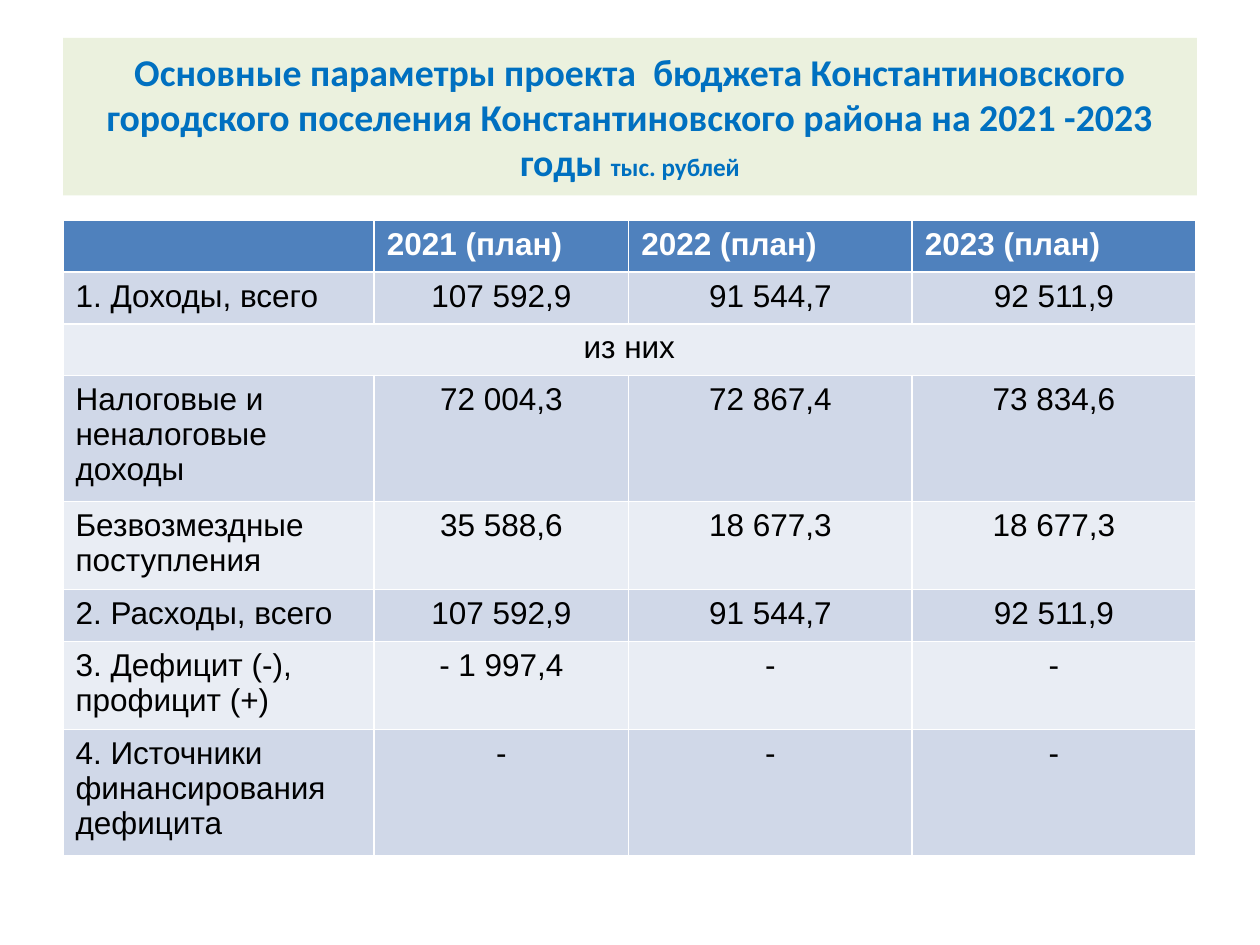
from pptx import Presentation
from pptx.dml.color import RGBColor
from pptx.enum.text import MSO_ANCHOR, MSO_AUTO_SIZE, PP_ALIGN
from pptx.util import Inches, Pt

PALE_GREEN = RGBColor(0xEB, 0xF1, 0xDE)
TITLE_BLUE = RGBColor(0x00, 0x70, 0xC0)
HEADER_BLUE = RGBColor(0x4F, 0x81, 0xBD)
DARK_BAND = RGBColor(0xD0, 0xD8, 0xE8)
LIGHT_BAND = RGBColor(0xE9, 0xED, 0xF4)
WHITE = RGBColor(0xFF, 0xFF, 0xFF)
BLACK = RGBColor(0x00, 0x00, 0x00)

TITLE_RUNS = [
    ("Основные параметры проекта  бюджета Константиновского городского "
     "поселения Константиновского района на 2021 -2023 годы ", 21.6),
    ("тыс. рублей", 14.4),
]
COLUMN_WIDTHS = [2.47, 2.02, 2.25, 2.25]
ROW_HEIGHTS = [0.41, 0.41, 0.41, 1, 0.7, 0.41, 0.7, 1]
SUBHEADING_ROW = 2
BUDGET_ROWS = [
    ["", "2021 (план)", "2022 (план)", "2023 (план)"],
    ["1. Доходы, всего", "107 592,9", "91 544,7", "92 511,9"],
    ["из них"],
    ["Налоговые и неналоговые доходы", "72 004,3", "72 867,4", "73 834,6"],
    ["Безвозмездные поступления", "35 588,6", "18 677,3", "18 677,3"],
    ["2. Расходы, всего", "107 592,9", "91 544,7", "92 511,9"],
    ["3. Дефицит (-), профицит (+)", "- 1 997,4", "-", "-"],
    ["4. Источники финансирования дефицита", "-", "-", "-"],
]


def format_font(font, name, size, color, bold):
    font.name = name
    font.size = Pt(size)
    font.color.rgb = color
    font.bold = bold


def fill_title(title):
    title.left, title.top = Inches(0.5), Inches(0.3)
    title.width, title.height = Inches(9), Inches(1.25)
    title.fill.solid()
    title.fill.fore_color.rgb = PALE_GREEN
    text_frame = title.text_frame
    text_frame.auto_size = MSO_AUTO_SIZE.NONE
    text_frame.word_wrap = True
    text_frame.vertical_anchor = MSO_ANCHOR.MIDDLE
    paragraph = text_frame.paragraphs[0]
    paragraph.alignment = PP_ALIGN.CENTER
    for text, size in TITLE_RUNS:
        run = paragraph.add_run()
        run.text = text
        format_font(run.font, "Calibri", size, TITLE_BLUE, True)


def fill_cell(cell, text, fill_color, font_color, bold, alignment):
    cell.fill.solid()
    cell.fill.fore_color.rgb = fill_color
    paragraph = cell.text_frame.paragraphs[0]
    paragraph.text = text
    paragraph.alignment = alignment
    format_font(paragraph.font, "Arial", 18, font_color, bold)
    for run in paragraph.runs:
        format_font(run.font, "Arial", 18, font_color, bold)


def add_budget_table(slide):
    table = slide.shapes.add_table(
        len(ROW_HEIGHTS), len(COLUMN_WIDTHS), Inches(0.5), Inches(1.75),
        Inches(sum(COLUMN_WIDTHS)), Inches(sum(ROW_HEIGHTS))).table
    for column, width in zip(table.columns, COLUMN_WIDTHS):
        column.width = Inches(width)
    for row, height in zip(table.rows, ROW_HEIGHTS):
        row.height = Inches(height)
    table.cell(SUBHEADING_ROW, 0).merge(
        table.cell(SUBHEADING_ROW, len(COLUMN_WIDTHS) - 1))

    for row_index, texts in enumerate(BUDGET_ROWS):
        is_header = row_index == 0
        band = DARK_BAND if row_index % 2 else LIGHT_BAND
        fill_color = HEADER_BLUE if is_header else band
        font_color = WHITE if is_header else BLACK
        for column_index, text in enumerate(texts):
            is_label = column_index == 0 and row_index != SUBHEADING_ROW
            alignment = PP_ALIGN.LEFT if is_header or is_label else PP_ALIGN.CENTER
            fill_cell(table.cell(row_index, column_index), text,
                      fill_color, font_color, is_header, alignment)


def main():
    presentation = Presentation()
    presentation.slide_width = Inches(10)
    presentation.slide_height = Inches(7.5)
    slide = presentation.slides.add_slide(presentation.slide_layouts[5])
    fill_title(slide.shapes.title)
    add_budget_table(slide)
    presentation.save("out.pptx")


if __name__ == "__main__":
    main()
